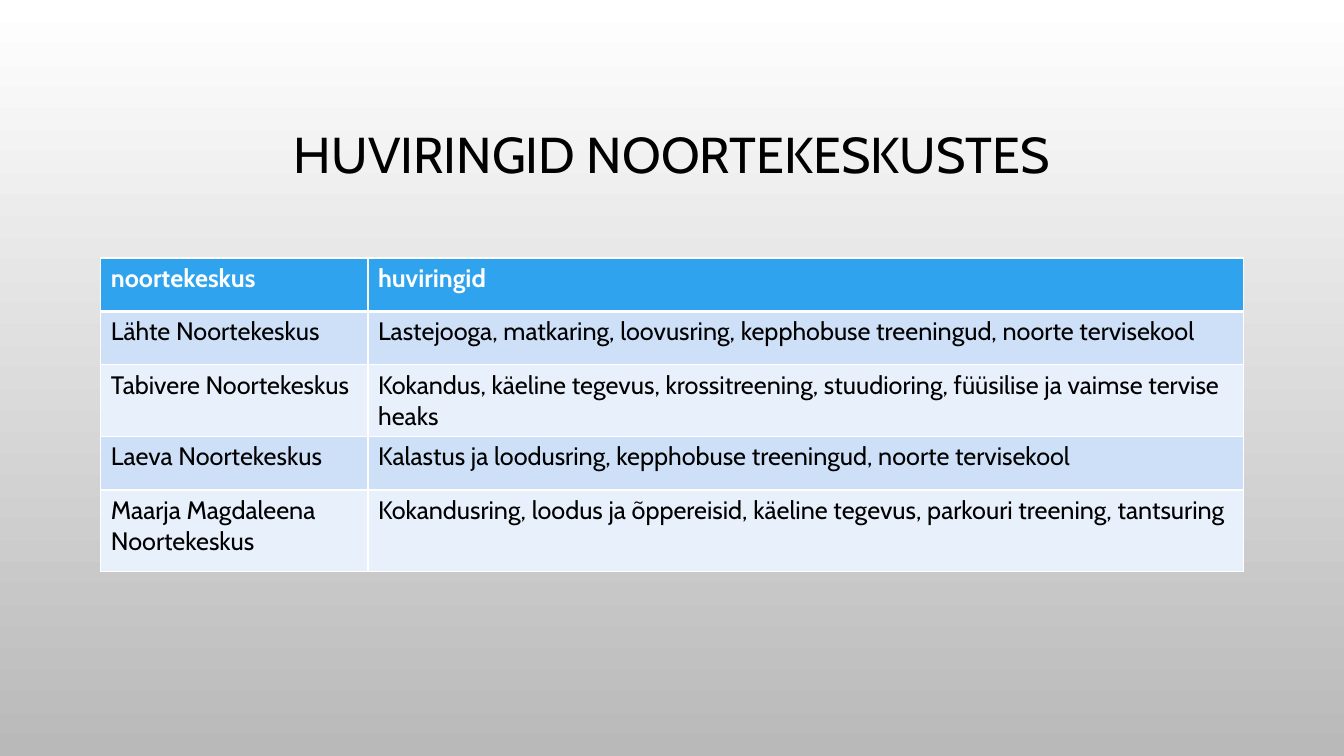
from pptx import Presentation
from pptx.dml.color import RGBColor
from pptx.enum.text import MSO_ANCHOR as ANCHOR, PP_ALIGN as ALIGN
from pptx.oxml import parse_xml
from pptx.oxml.ns import nsdecls
from pptx.util import Inches, Pt

FONT = "Cabin"
BLACK = RGBColor(0x00, 0x00, 0x00)
WHITE = RGBColor(0xFF, 0xFF, 0xFF)
GRAY = RGBColor(0xB9, 0xB9, 0xB9)
HEADER_BLUE = RGBColor(0x2F, 0xA3, 0xEE)
BAND_BLUE = RGBColor(0xCD, 0xE0, 0xF8)
PALE_BLUE = RGBColor(0xE8, 0xF0, 0xFC)

ROWS = [
    ("noortekeskus", "huviringid"),
    ("Lähte Noortekeskus",
     "Lastejooga, matkaring, loovusring, kepphobuse treeningud, noorte tervisekool"),
    ("Tabivere Noortekeskus",
     "Kokandus, käeline tegevus, krossitreening, stuudioring, füüsilise ja vaimse tervise heaks"),
    ("Laeva Noortekeskus",
     "Kalastus ja loodusring, kepphobuse treeningud, noorte tervisekool"),
    ("Maarja Magdaleena Noortekeskus",
     "Kokandusring, loodus ja õppereisid, käeline tegevus, parkouri treening, tantsuring"),
]
COL_WIDTHS = [2.65, 8.68]
ROW_HEIGHTS = [0.53, 0.53, 0.53, 0.53, 0.81]


def write(tf, text, size=18, color=BLACK, bold=False, align=ALIGN.LEFT, spacing=1.0):
    p = tf.paragraphs[0]
    p.alignment = align
    p.line_spacing = spacing
    r = p.add_run()
    r.text = text
    r.font.name = FONT
    r.font.size = Pt(size)
    r.font.bold = bold
    r.font.color.rgb = color


def set_borders(cell, **widths):
    tcPr = cell._tc.get_or_add_tcPr()
    for i, (side, width) in enumerate(widths.items()):
        tcPr.insert(i, parse_xml(
            f'<a:ln{side} {nsdecls("a")} w="{Pt(width)}"><a:solidFill>'
            f'<a:srgbClr val="{WHITE}"/></a:solidFill></a:ln{side}>'))


prs = Presentation()
prs.slide_width, prs.slide_height = Inches(13.33), Inches(7.5)
s = prs.slides.add_slide(prs.slide_layouts[5])

# Background: white fading down to gray
bg = s.background.fill
bg.gradient()
bg.gradient_angle = 270
for stop, color in zip(bg.gradient_stops, (WHITE, GRAY)):
    stop.color.rgb = color

# Title
title = s.shapes.title
title.left, title.top = Inches(1), Inches(0.68)
title.width, title.height = Inches(11.33), Inches(1.75)
title.text_frame.vertical_anchor = ANCHOR.MIDDLE
write(title.text_frame, "HUVIRINGID NOORTEKESKUSTES", size=36,
      align=ALIGN.CENTER, spacing=0.9)

# Table of youth centres and their hobby groups
table = s.shapes.add_table(len(ROWS), len(COL_WIDTHS), Inches(1), Inches(2.56),
                           Inches(sum(COL_WIDTHS)), Inches(sum(ROW_HEIGHTS))).table
for col, width in zip(table.columns, COL_WIDTHS):
    col.width = Inches(width)
for row, height in zip(table.rows, ROW_HEIGHTS):
    row.height = Inches(height)

for i, texts in enumerate(ROWS):
    header = i == 0
    fill = HEADER_BLUE if header else BAND_BLUE if i % 2 else PALE_BLUE
    for j, text in enumerate(texts):
        cell = table.cell(i, j)
        cell.fill.solid()
        cell.fill.fore_color.rgb = fill
        set_borders(cell, L=1, R=1, T=3 if i == 1 else 1, B=3 if header else 1)
        write(cell.text_frame, text, color=WHITE if header else BLACK, bold=header)

prs.save("out.pptx")
